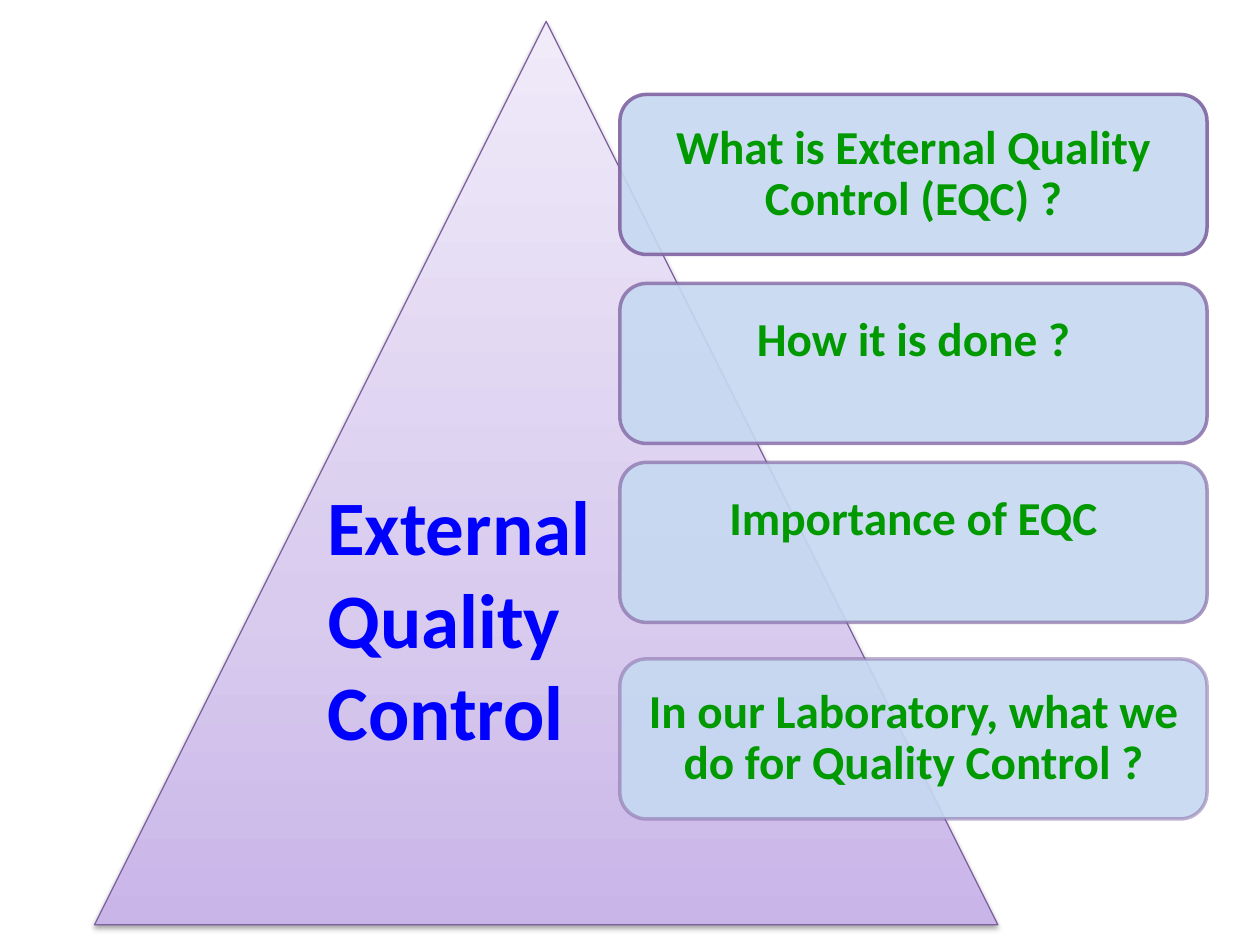
from copy import deepcopy
from lxml import etree
from pptx import Presentation
from pptx.dml.color import RGBColor
from pptx.enum.shapes import MSO_SHAPE
from pptx.enum.text import MSO_ANCHOR, PP_ALIGN
from pptx.oxml.ns import qn
from pptx.util import Inches, Pt

TRIANGLE, ROUNDED = MSO_SHAPE.ISOSCELES_TRIANGLE, MSO_SHAPE.ROUNDED_RECTANGLE
LEFT, CENTER = PP_ALIGN.LEFT, PP_ALIGN.CENTER
TOP, MIDDLE = MSO_ANCHOR.TOP, MSO_ANCHOR.MIDDLE

HEADING = ["External", "Quality", "Control"]
# top, text, line opacity, bottom inset
TOPICS = [
    (0.75, "What is External Quality Control (EQC) ?", 90, 0.11),
    (2.25, "How it is done ?", 77, 0.47),
    (3.67, "Importance of EQC", 63, 0.47),
    (5.23, "In our Laboratory, what we do for Quality Control ?", 50, 0.11),
]
STOPS = [(0, "C9B5E8"), (0.35, "D8CBEE"), (1, "F0EAF9")]


def rgb(value):
    return RGBColor.from_string(value)


def set_alpha(parent, percent):
    color = next(parent.iter(qn("a:srgbClr")))
    etree.SubElement(color, qn("a:alpha")).set("val", str(percent * 1000))


def add_shape(slide, kind, box, line, width):
    s = slide.shapes.add_shape(kind, *map(Inches, box))
    s.shadow.inherit = False
    s.line.color.rgb = rgb(line)
    s.line.width = Pt(width)
    return s


def write(tf, lines, size, color, align=LEFT, anchor=TOP, spacing=1.0):
    tf.word_wrap = True
    tf.vertical_anchor = anchor
    for i, text in enumerate(lines):
        p = tf.add_paragraph() if i else tf.paragraphs[0]
        p.alignment = align
        p.line_spacing = spacing
        r = p.add_run()
        r.text = text
        r.font.name = "Calibri"
        r.font.size = Pt(size)
        r.font.bold = True
        r.font.color.rgb = rgb(color)


def add_triangle(slide):
    s = add_shape(slide, TRIANGLE, (0.75, 0.17, 7.17, 7.17), "7D60A0", 0.75)
    s.fill.gradient()
    s.fill.gradient_angle = 90
    stop_list = next(s._element.spPr.iter(qn("a:gsLst")))
    stop_list.append(deepcopy(stop_list[-1]))
    for stop, (position, color) in zip(s.fill.gradient_stops, STOPS):
        stop.position = position
        stop.color.rgb = rgb(color)
    effects = s._element.spPr.find(qn("a:effectLst"))
    shadow = etree.SubElement(effects, qn("a:outerShdw"), blurRad=str(Pt(3.1)),
                              dist=str(Pt(1.6)), dir="5400000", rotWithShape="0")
    etree.SubElement(shadow, qn("a:srgbClr"), val="000000")
    set_alpha(shadow, 38)


def add_topic(slide, top, text, opacity, bottom):
    s = add_shape(slide, ROUNDED, (4.92, top, 4.66, 1.27), "8064A2", 2)
    s.fill.solid()
    s.fill.fore_color.rgb = rgb("C6D9F1")
    spPr = s._element.spPr
    set_alpha(spPr.find(qn("a:solidFill")), 90)
    set_alpha(spPr.find(qn("a:ln")), opacity)
    tf = s.text_frame
    tf.margin_left = tf.margin_right = tf.margin_top = Inches(0.11)
    tf.margin_bottom = Inches(bottom)
    write(tf, [text], 27, "009900", CENTER, MIDDLE, 0.9)


def main():
    prs = Presentation()
    prs.slide_width, prs.slide_height = Inches(10), Inches(7.5)
    slide = prs.slides.add_slide(prs.slide_layouts[6])
    add_triangle(slide)
    for topic in TOPICS:
        add_topic(slide, *topic)
    heading = slide.shapes.add_textbox(*map(Inches, (2.5, 3.75, 2.37, 2.32)))
    write(heading.text_frame, HEADING, 44, "0000FF")
    prs.save("out.pptx")


if __name__ == "__main__":
    main()
